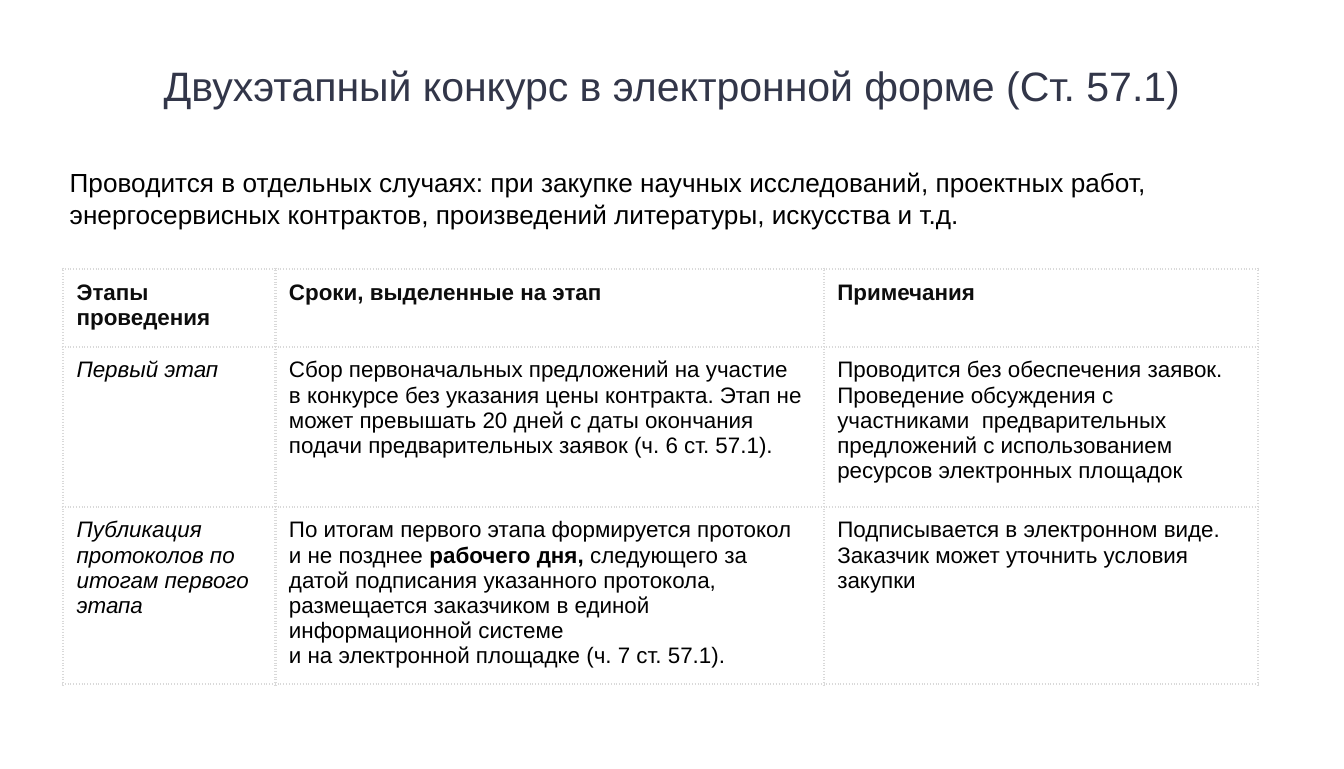
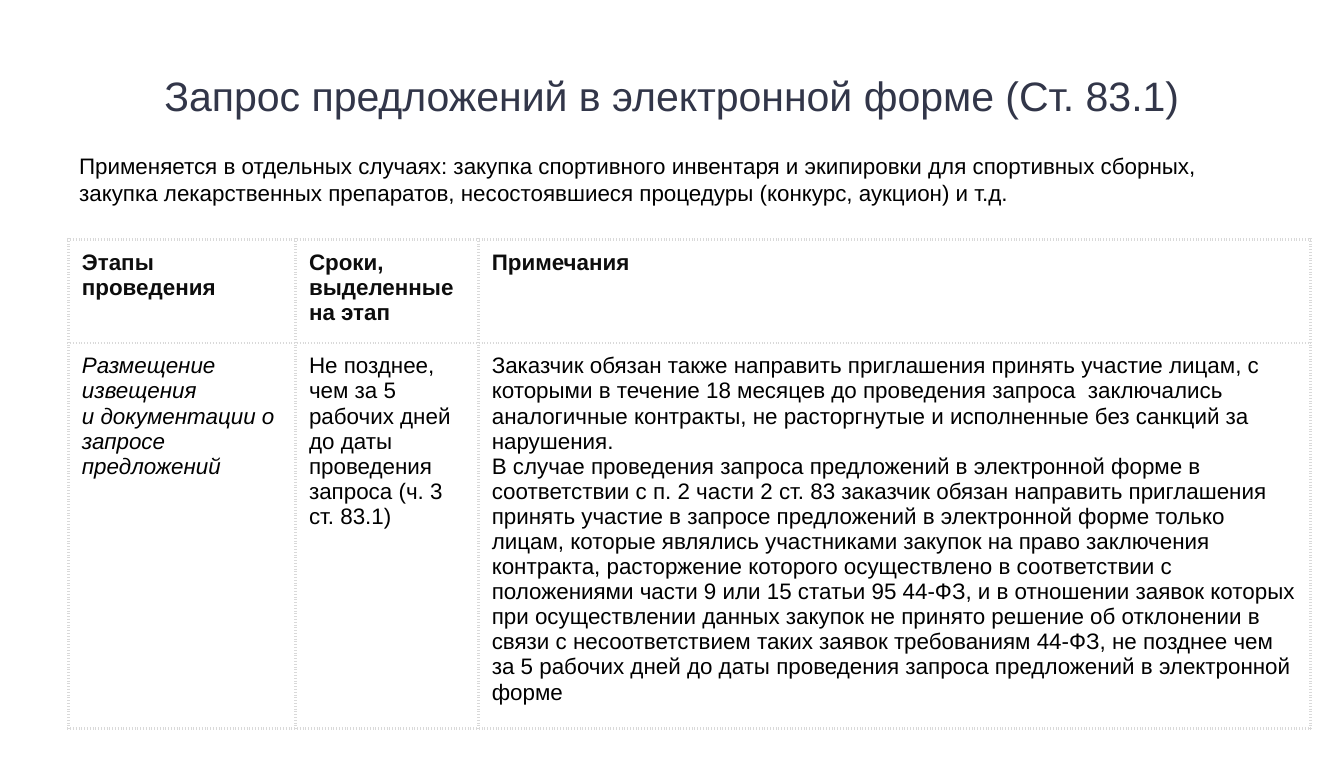
import pptx
import pptx.dml.color
import pptx.enum.text
import pptx.oxml
import pptx.oxml.ns
import pptx.util

COLORS = {"title": "323649", "header": "0D0D0D", "body": "000000", "border": "D9D9D9"}
FONT = "Arial"
TABLE_SIZE = 12
CELL_MARGINS = {"left": 1, "top": 0.8, "right": 1, "bottom": 1.2}
BORDER_WIDTH = 1.5


class Deck:
    """Holds the style and the current slide; lengths are in grid units, 100 to the slide's width."""

    def __init__(self, columns=100, rows=57.2):
        self.prs = pptx.Presentation()
        self.prs.slide_width = self.grid(columns)
        self.prs.slide_height = self.grid(rows)
        self.s = None

    def grid(self, n):
        return pptx.util.Inches(n / 10)

    def format(self, p, size, color, bold=False, italic=False):
        for r in p.runs:
            r.font.name = FONT
            r.font.size = pptx.util.Pt(size)
            r.font.color.rgb = pptx.dml.color.RGBColor.from_string(COLORS[color])
            r.font.bold = bool(bold or r.font.bold)
            r.font.italic = italic

    def slide(self, title, height):
        self.s = self.prs.slides.add_slide(self.prs.slide_layouts[5])
        sp = self.s.shapes.title
        sp.left, sp.top, sp.width, sp.height = map(self.grid, (5, 2.3, 90, height))
        tf = sp.text_frame
        tf.text = title
        tf.vertical_anchor = pptx.enum.text.MSO_ANCHOR.MIDDLE
        p = tf.paragraphs[0]
        p.alignment = pptx.enum.text.PP_ALIGN.CENTER
        self.format(p, 22, "title")

    def intro(self, text, box, size):
        sp = self.s.shapes.add_textbox(*map(self.grid, box))
        tf = sp.text_frame
        tf.word_wrap = True
        tf.text = text
        self.format(tf.paragraphs[0], size, "body")

    def table(self, left, top, widths, heights, rows):
        """Draws a table whose first row is a bold header and first column is italic.

        A cell is a tuple of its paragraphs, or a string if it has only one.
        """
        box = map(self.grid, (left, top, sum(widths), sum(heights)))
        table = self.s.shapes.add_table(len(rows), len(widths), *box).table
        table.first_row = table.horz_banding = False
        for column, width in zip(table.columns, widths):
            column.width = self.grid(width)
        for i, (row, height) in enumerate(zip(rows, heights)):
            table.rows[i].height = self.grid(height)
            for j, content in enumerate(row):
                cell = table.cell(i, j)
                self.border(cell)
                cell.fill.background()
                for side, margin in CELL_MARGINS.items():
                    setattr(cell, f"margin_{side}", self.grid(margin))
                parts = (content,) if isinstance(content, str) else content
                self.fill_cell(cell.text_frame, parts, header=i == 0, italic=i > 0 and j == 0)

    def fill_cell(self, tf, parts, header, italic):
        """Writes one paragraph per part; ** surrounds bold words."""
        for k, part in enumerate(parts):
            p = tf.add_paragraph() if k else tf.paragraphs[0]
            for n, piece in enumerate(part.split("**")):
                for m, line in enumerate(piece.split("\n")):
                    if m:
                        p.add_line_break()
                    r = p.add_run()
                    r.text = line
                    r.font.bold = n % 2 == 1
            self.format(p, TABLE_SIZE, "header" if header else "body", header, italic)
        p.space_after = pptx.util.Pt(6)

    def border(self, cell):
        tcPr = cell._tc.get_or_add_tcPr()
        for side in "LRTB":
            tcPr.append(pptx.oxml.parse_xml(
                f'<a:ln{side} {pptx.oxml.ns.nsdecls("a")} w="{pptx.util.Pt(BORDER_WIDTH)}">'
                f'<a:solidFill><a:srgbClr val="{COLORS["border"]}"/></a:solidFill>'
                f'<a:prstDash val="sysDot"/></a:ln{side}>'))


HEADER = ("Этапы проведения", "Сроки, выделенные на этап", "Примечания")


def two_stage_tender(deck):
    deck.slide("Двухэтапный конкурс в электронной форме (Ст. 57.1)", 8)
    deck.table(4.7, 20, (15.8, 40.8, 32.3), (5.8, 11.9, 13.1), (
        HEADER,
        ("Первый этап",
         "Сбор первоначальных предложений на участие\nв конкурсе без указания цены контракта. "
         "Этап не может превышать 20 дней с даты окончания подачи предварительных заявок "
         "(ч. 6 ст. 57.1).",
         "Проводится без обеспечения заявок. Проведение обсуждения с участниками  "
         "предварительных предложений с использованием ресурсов электронных площадок"),
        ("Публикация протоколов по итогам первого этапа",
         "По итогам первого этапа формируется протокол\nи не позднее **рабочего дня,** "
         "следующего за датой подписания указанного протокола, размещается заказчиком "
         "в единой информационной системе\nи на электронной площадке (ч. 7 ст. 57.1).",
         "Подписывается в электронном виде. Заказчик может уточнить условия закупки"),
    ))
    deck.intro("Проводится в отдельных случаях: при закупке научных исследований, проектных "
               "работ, энергосервисных контрактов, произведений литературы, искусства и т.д.",
               (4.2, 11.9, 89.5, 7.7), 14)


def request_for_proposals(deck):
    deck.slide("Запрос предложений в электронной форме (Ст. 83.1)", 9.5)
    deck.table(5.1, 17.8, (16.9, 13.6, 61.9), (7.7, 28.7), (
        HEADER,
        ("Размещение извещения\nи документации о запросе предложений",
         "Не позднее, чем за 5 рабочих дней до даты проведения запроса (ч. 3 ст. 83.1)",
         ("Заказчик обязан также направить приглашения принять участие лицам, с которыми "
          "в течение 18 месяцев до проведения запроса  заключались аналогичные контракты, "
          "не расторгнутые и исполненные без санкций за нарушения.",
          "В случае проведения запроса предложений в электронной форме в соответствии с п. 2 "
          "части 2 ст. 83 заказчик обязан направить приглашения принять участие в запросе "
          "предложений в электронной форме только лицам, которые являлись участниками закупок "
          "на право заключения контракта, расторжение которого осуществлено в соответствии "
          "с положениями части 9 или 15 статьи 95 44-ФЗ, и в отношении заявок которых при "
          "осуществлении данных закупок не принято решение об отклонении в связи "
          "с несоответствием таких заявок требованиям 44-ФЗ, не позднее чем за 5 рабочих дней "
          "до даты проведения запроса предложений в электронной форме")),
    ))
    deck.intro("Применяется в отдельных случаях: закупка спортивного инвентаря и экипировки для "
               "спортивных сборных, закупка лекарственных препаратов, несостоявшиеся процедуры "
               "(конкурс, аукцион) и т.д.",
               (4.9, 10.8, 89.2, 5), 12)


def main():
    deck = Deck()
    two_stage_tender(deck)
    request_for_proposals(deck)
    deck.prs.save("out.pptx")


if __name__ == "__main__":
    main()
